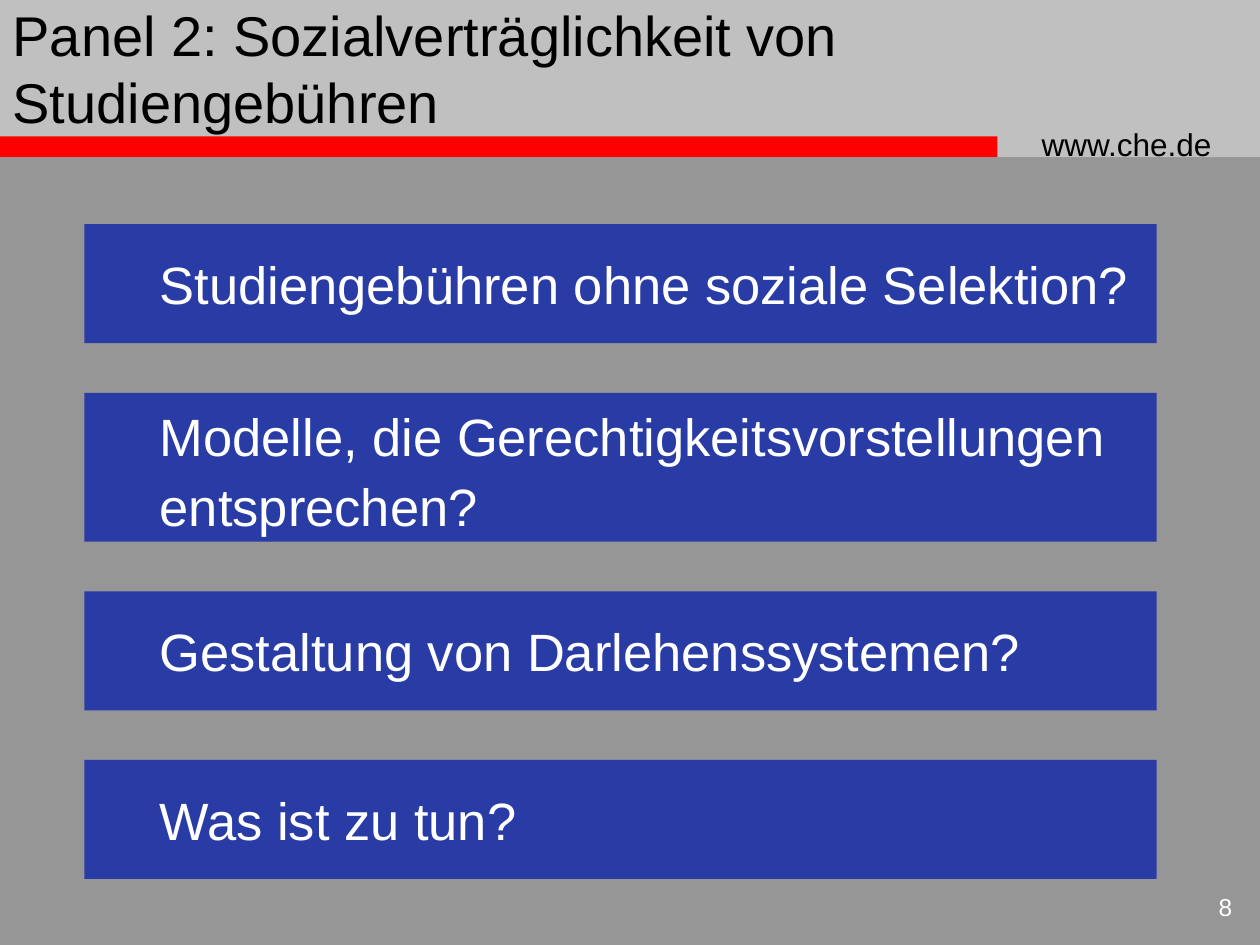
from dataclasses import dataclass

from pptx import Presentation
from pptx.dml.color import RGBColor
from pptx.enum.shapes import MSO_SHAPE as Shape
from pptx.enum.text import MSO_ANCHOR as Anchor, PP_ALIGN as Align
from pptx.util import Cm, Pt

GREY, SILVER, RED, BLUE = "969696", "C0C0C0", "FF0000", "293BA5"
BLACK, WHITE = "000000", "FFFFFF"
LEFT, TOP, WIDTH, GAP = 1.7, 4.52, 21.62, 1.0


@dataclass
class Topic:
    lines: list[str]
    height: float = 2.4
    spacing: float = 1.0


TOPICS = [
    Topic(["Studiengebühren ohne soziale Selektion?"]),
    Topic(["Modelle, die Gerechtigkeitsvorstellungen", "entsprechen?"], 3.0, 1.1),
    Topic(["Gestaltung von Darlehenssystemen?"]),
    Topic(["Was ist zu tun?"]),
]


def paint(fill, color: str) -> None:
    fill.solid()
    fill.fore_color.rgb = RGBColor.from_string(color)


def write(para, text: str, size: int, color: str, align=Align.LEFT) -> None:
    para.alignment = align
    run = para.add_run()
    run.text = text
    run.font.name = "Arial"
    run.font.size = Pt(size)
    paint(run.font.fill, color)


def bar(slide, x: float, y: float, w: float, h: float, color: str):
    box = slide.shapes.add_shape(Shape.RECTANGLE, Cm(x), Cm(y), Cm(w), Cm(h))
    box.shadow.inherit = False
    paint(box.fill, color)
    box.line.fill.background()
    return box


def label(slide, x: float, y: float, w: float, h: float, text: str,
          size: int, color: str, align=Align.LEFT) -> None:
    frame = slide.shapes.add_textbox(Cm(x), Cm(y), Cm(w), Cm(h)).text_frame
    frame.word_wrap = True
    write(frame.paragraphs[0], text, size, color, align)


def panel(slide, topic: Topic, y: float) -> None:
    frame = bar(slide, LEFT, y, WIDTH, topic.height, BLUE).text_frame
    frame.word_wrap = True
    frame.vertical_anchor = Anchor.MIDDLE
    for i, line in enumerate(topic.lines):
        para = frame.add_paragraph() if i else frame.paragraphs[0]
        para.level = 1
        props = para._p.get_or_add_pPr()
        props.set("marL", str(Cm(1.27)))
        props.set("indent", "0")
        para.line_spacing = topic.spacing
        write(para, line, 30, WHITE)


def main() -> None:
    deck = Presentation()
    deck.slide_width, deck.slide_height = Cm(25.4), Cm(19.05)
    slide = deck.slides.add_slide(deck.slide_layouts[5])
    paint(slide.background.fill, GREY)

    # Header band, web address and page number
    bar(slide, 0, 0, 25.4, 3.17, SILVER)
    bar(slide, -0.03, 2.75, 20.14, 0.42, RED)
    label(slide, 20.75, 2.39, 4.45, 1.02, "www.che.de", 18, BLACK)
    label(slide, 23.62, 17.86, 1.47, 1.07, "8", 14, WHITE, Align.RIGHT)

    # Title, raised above the band
    title = slide.shapes.title
    title.left, title.top = Cm(0), Cm(0)
    title.width, title.height = Cm(20.52), Cm(2.74)
    title.text_frame.word_wrap = True
    title.text_frame.vertical_anchor = Anchor.MIDDLE
    write(title.text_frame.paragraphs[0],
          "Panel 2: Sozialverträglichkeit von Studiengebühren", 32, BLACK)
    title.element.getparent().append(title.element)

    # Stacked topics with equal gaps
    y = TOP
    for topic in TOPICS:
        panel(slide, topic, y)
        y += topic.height + GAP

    deck.save("out.pptx")


if __name__ == "__main__":
    main()
